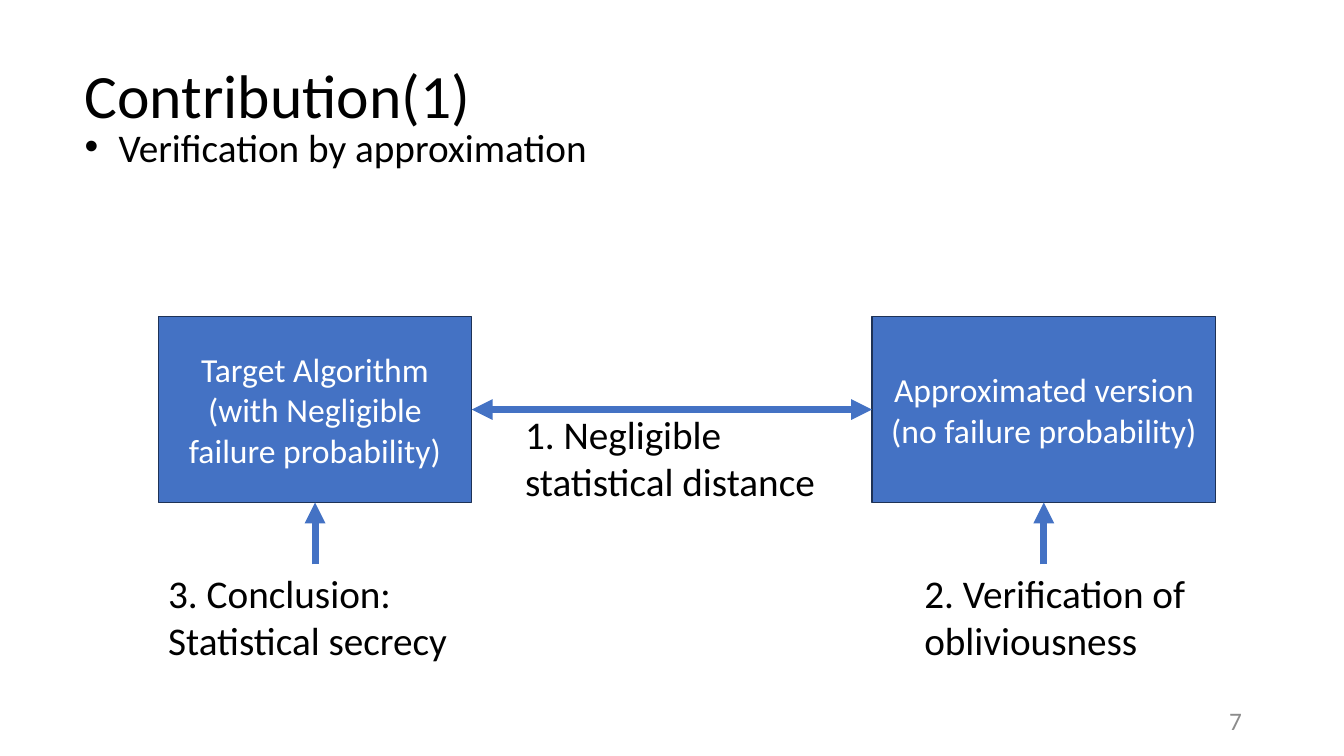
from collections import namedtuple

from lxml.etree import SubElement
from pptx import Presentation
from pptx.dml.color import RGBColor
from pptx.enum.shapes import MSO_CONNECTOR, MSO_SHAPE
from pptx.enum.text import MSO_ANCHOR, PP_ALIGN
from pptx.oxml.ns import qn
from pptx.util import Inches, Pt

BLACK, WHITE, GREY = "000000", "FFFFFF", "8C8C8C"
BLUE, NAVY = "4472C4", "1E3256"

# Left, top, width and height in percent of the slide's size
Area = namedtuple("Area", "left top width height")


def rgb(hex_colour):
    return RGBColor.from_string(hex_colour)


class DiagramSlide:
    font = "Calibri"

    def __init__(self, deck):
        self.width, self.height = deck.slide_width, deck.slide_height
        self.slide = deck.slides.add_slide(deck.slide_layouts[6])

    def x(self, share):
        return round(self.width * share / 100)

    def y(self, share):
        return round(self.height * share / 100)

    def place(self, area):
        return (self.x(area.left), self.y(area.top),
                self.x(area.width), self.y(area.height))

    def add_lines(self, shape, lines, size, colour, align, anchor):
        frame = shape.text_frame
        frame.word_wrap = True
        frame.vertical_anchor = anchor
        for number, line in enumerate(lines):
            paragraph = frame.add_paragraph() if number else frame.paragraphs[0]
            paragraph.alignment = align
            run = paragraph.add_run()
            run.text = line
            run.font.name = self.font
            run.font.size = Pt(size)
            run.font.color.rgb = rgb(colour)
        return frame.paragraphs

    def text(self, area, *lines, size=28, colour=BLACK,
             align=PP_ALIGN.LEFT, anchor=MSO_ANCHOR.TOP):
        label = self.slide.shapes.add_textbox(*self.place(area))
        return self.add_lines(label, lines, size, colour, align, anchor)

    def title(self, area, wording):
        heading, = self.text(area, wording, size=44, anchor=MSO_ANCHOR.MIDDLE)
        heading.line_spacing = 0.9

    def bullet(self, area, wording, space_before):
        point, = self.text(area, wording)
        point.line_spacing = 0.8
        point.space_before = Pt(space_before)
        properties = point._p.get_or_add_pPr()
        properties.set("marL", str(Inches(0.25)))
        properties.set("indent", str(-Inches(0.25)))
        SubElement(properties, qn("a:buFont"), typeface="Arial")
        SubElement(properties, qn("a:buChar"), char="•")

    def box(self, area, *lines):
        box = self.slide.shapes.add_shape(MSO_SHAPE.RECTANGLE, *self.place(area))
        box.shadow.inherit = False
        box.fill.solid()
        box.fill.fore_color.rgb = rgb(BLUE)
        box.line.color.rgb = rgb(NAVY)
        box.line.width = Pt(1)
        self.add_lines(box, lines, 24, WHITE, PP_ALIGN.CENTER, MSO_ANCHOR.MIDDLE)

    def arrow(self, start, end, both_ways=False):
        arrow = self.slide.shapes.add_connector(
            MSO_CONNECTOR.STRAIGHT, self.x(start[0]), self.y(start[1]),
            self.x(end[0]), self.y(end[1]))
        arrow.line.color.rgb = rgb(BLUE)
        arrow.line.width = Pt(5)
        properties = arrow._element.spPr
        outline = properties.find(qn("a:ln"))
        for side in ("headEnd", "tailEnd") if both_ways else ("tailEnd",):
            SubElement(outline, qn(f"a:{side}"), type="triangle")
        SubElement(properties, qn("a:effectLst"))


def main():
    deck = Presentation()
    deck.slide_width, deck.slide_height = Inches(13.33), Inches(7.5)
    slide = DiagramSlide(deck)

    slide.title(Area(5.55, 3.33, 86.25, 19.33), "Contribution(1)")
    slide.bullet(Area(5.55, 16.8, 86.25, 13.73),
                 " Verification by approximation", space_before=47)
    slide.text(Area(70.65, 92.67, 22.5, 5.33), "7", size=18, colour=GREY,
               align=PP_ALIGN.RIGHT, anchor=MSO_ANCHOR.MIDDLE)

    target = Area(11.78, 41.87, 23.32, 24.6)
    approximation = Area(64.88, target.top, 25.58, target.height)
    slide.box(target, "Target Algorithm", "(with Negligible failure probability)")
    slide.box(approximation, "Approximated version", "(no failure probability)")

    middle = target.top + target.height / 2
    slide.arrow((target.left + target.width, middle),
                (approximation.left, middle), both_ways=True)
    slide.text(Area(38.33, 53.6, 23.32, 13.87), "1. Negligible statistical distance")

    steps_top = 74.67
    steps = [
        (approximation, 68.03, 21.15, ["2. Verification of obliviousness"]),
        (target, target.left, target.width, ["3. Conclusion:", "Statistical secrecy"]),
    ]
    for box, left, width, lines in steps:
        centre = box.left + box.width / 2
        slide.arrow((centre, steps_top), (centre, box.top + box.height))
        slide.text(Area(left, steps_top, width, 13.87), *lines)

    deck.save("out.pptx")


if __name__ == "__main__":
    main()
